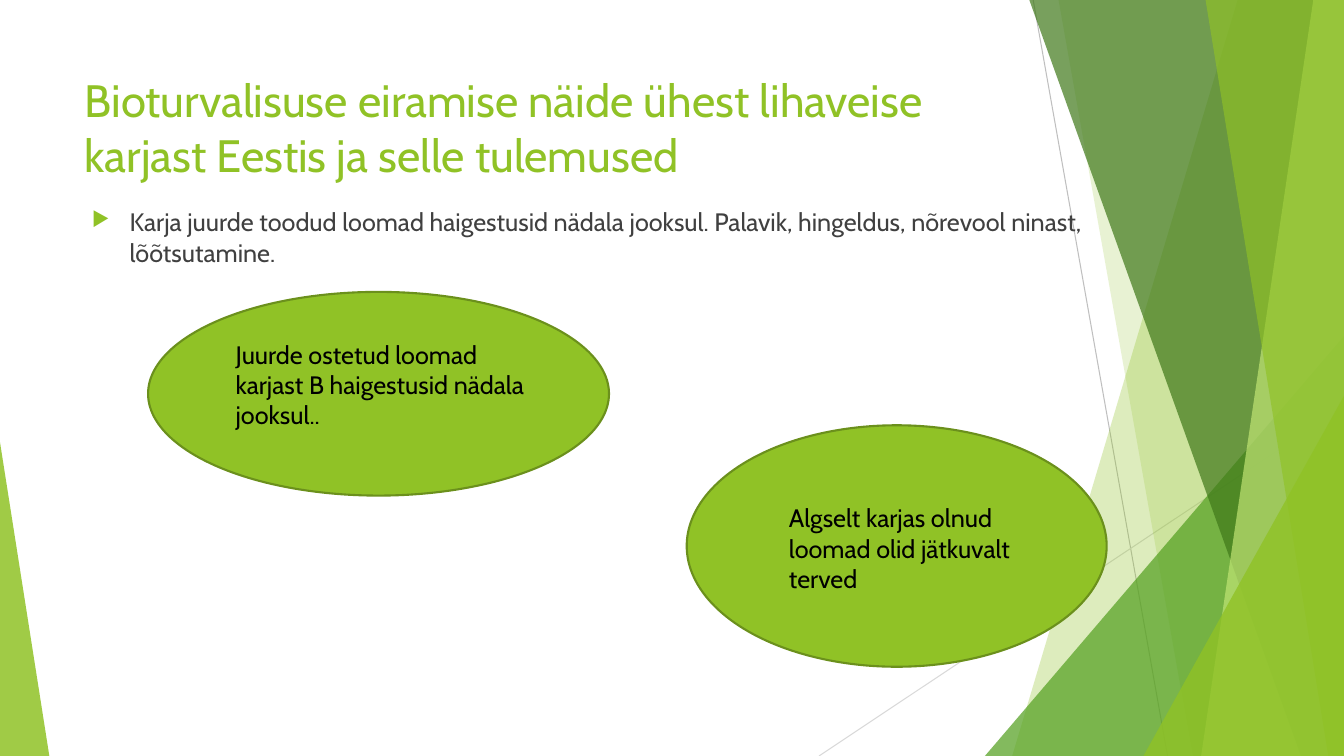
from lxml.etree import SubElement
from pptx import Presentation
from pptx.dml.color import RGBColor
from pptx.enum.shapes import MSO_CONNECTOR, MSO_SHAPE
from pptx.enum.text import MSO_ANCHOR, MSO_AUTO_SIZE, PP_ALIGN
from pptx.oxml.ns import qn
from pptx.util import Pt

PX = 9525
WIDTH, HEIGHT = 1280, 720
THEME = {
    "font": "Cabin",
    "title_size": 32.4,
    "body_size": 18,
    "lime": "90C226",
    "lime_edge": "6B901C",
    "pale_lime": "C0E474",
    "leaf": "54A021",
    "forest": "3F7819",
    "body": "404040",
    "label": "000000",
    "grey": "BFBFBF",
    "light_grey": "D9D9D9",
}


def paint(shape, color, opacity=100):
    shape.shadow.inherit = False
    shape.fill.solid()
    shape.fill.fore_color.rgb = RGBColor.from_string(THEME[color])
    shape.line.fill.background()
    if opacity < 100:
        color_node = shape.fill._xPr.find(".//" + qn("a:srgbClr"))
        SubElement(color_node, qn("a:alpha"), val=str(opacity * 1000))


def write(box, words, size, color, auto_size=MSO_AUTO_SIZE.NONE):
    frame = box.text_frame
    frame_format = {
        "word_wrap": True,
        "auto_size": auto_size,
        "vertical_anchor": MSO_ANCHOR.TOP,
    }
    for name, value in frame_format.items():
        setattr(frame, name, value)
    para = frame.paragraphs[0]
    para.alignment = PP_ALIGN.LEFT
    span = para.add_run()
    span.text = words
    for name, value in {"name": THEME["font"], "size": Pt(THEME[size])}.items():
        setattr(span.font, name, value)
    span.font.color.rgb = RGBColor.from_string(THEME[color])
    return para


deck = Presentation()
deck.slide_width, deck.slide_height = WIDTH * PX, HEIGHT * PX
page = deck.slides.add_slide(deck.slide_layouts[5])
shapes = page.shapes

for ends, color in [
    ((984, 0, 1112, HEIGHT), "grey"),
    ((WIDTH, 387, 780, HEIGHT), "light_grey"),
]:
    ray = shapes.add_connector(MSO_CONNECTOR.STRAIGHT, *[end * PX for end in ends])
    ray.line.color.rgb = RGBColor.from_string(THEME[color])
    ray.line.width = Pt(0.75)
    SubElement(ray._element.spPr, qn("a:effectLst"))

facets = [
    ("band", (1179, 964), "lime", 30),
    ("band", (1008, 1136), "lime", 20),
    ("triangle", (938, 320, 342, 1), "leaf", 72),
    ("band", (980, 1239), "forest", 70),
    ("band", (1251, 1144), "pale_lime", 70),
    ("band", (1148, 1265), "lime", 65),
    ("triangle", (1089, 377, 191, 1), "lime", 80),
    ("triangle", (0, 421, 47, 0), "lime", 85),
]
for kind, place, color, opacity in facets:
    if kind == "band":
        top_x, bottom_x = place
        outline = shapes.build_freeform(top_x, -1, scale=PX)
        outline.add_line_segments([(WIDTH, -1), (WIDTH, HEIGHT), (bottom_x, HEIGHT)])
        facet = outline.convert_to_shape()
    else:
        left, top, width, apex = place
        facet = shapes.add_shape(
            MSO_SHAPE.ISOSCELES_TRIANGLE,
            left * PX, top * PX, width * PX, (HEIGHT - top) * PX,
        )
        facet.adjustments[0] = apex
    paint(facet, color, opacity)

title = shapes.title
for name, value in {"left": 71, "top": 64, "width": 902, "height": 138}.items():
    setattr(title, name, value * PX)
write(
    title,
    "Bioturvalisuse eiramise näide ühest lihaveise karjast Eestis ja selle tulemused",
    "title_size",
    "lime",
)

body = shapes.add_textbox(78 * PX, 192 * PX, 1104 * PX, 457 * PX)
bullet = write(
    body,
    "Karja juurde toodud loomad haigestusid nädala jooksul. "
    "Palavik, hingeldus, nõrevool ninast, lõõtsutamine.",
    "body_size",
    "body",
)
bullet.space_before = Pt(10)
properties = bullet._p.get_or_add_pPr()
properties.set("marL", str(36 * PX))
properties.set("indent", str(-36 * PX))
bullet_color = SubElement(properties, qn("a:buClr"))
SubElement(bullet_color, qn("a:srgbClr"), val=THEME["lime"])
SubElement(properties, qn("a:buSzPct"), val="80000")
SubElement(properties, qn("a:buChar"), char="▶")

findings = [
    (
        (141, 278, 439, 194),
        (215, 318, 306, 97),
        "Juurde ostetud loomad karjast B haigestusid nädala jooksul..",
    ),
    (
        (654, 405, 400, 230),
        (742, 474, 270, 97),
        "Algselt karjas olnud loomad olid jätkuvalt terved",
    ),
]
for oval_place, label_place, words in findings:
    oval = shapes.add_shape(MSO_SHAPE.OVAL, *[length * PX for length in oval_place])
    paint(oval, "lime")
    oval.line.color.rgb = RGBColor.from_string(THEME["lime_edge"])
    oval.line.width = Pt(1.5)
    label = shapes.add_textbox(*[length * PX for length in label_place])
    write(label, words, "body_size", "label", MSO_AUTO_SIZE.SHAPE_TO_FIT_TEXT)

deck.save("out.pptx")
